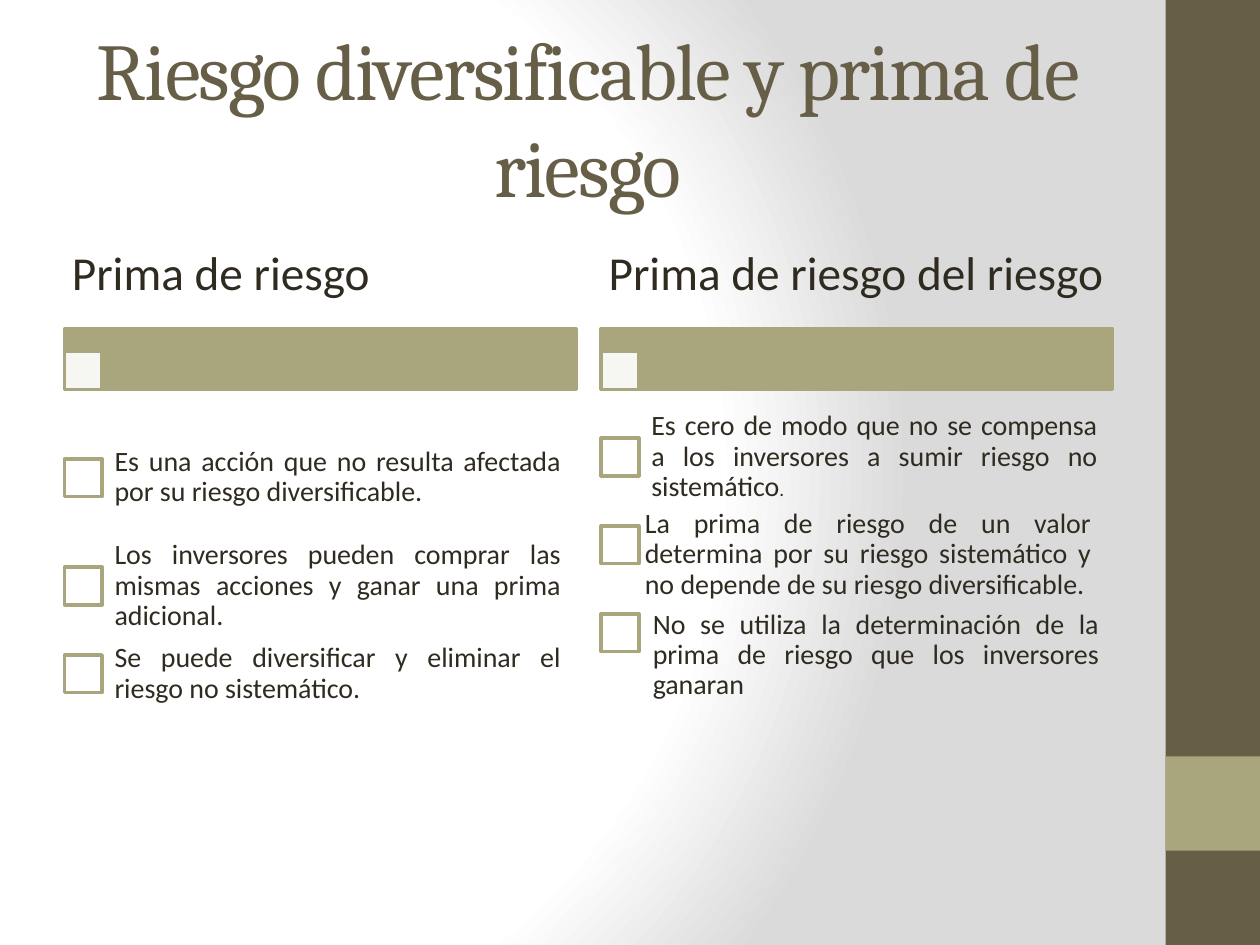
from lxml import etree
from pptx import Presentation
from pptx import util as u
from pptx.dml.color import RGBColor
from pptx.enum import shapes, text
from pptx.oxml import parse_xml
from pptx.oxml.ns import nsdecls, qn

COLORS = {"brown": "675E47", "olive": "A9A57C", "ink": "2F2B20",
          "white": "FFFFFF", "gray": "DADADA"}
BAR_TOP, BAR_HEIGHT = 2.18, 1.22
ROWS_TOP = 3.88
CHECK = 0.76
TEXT_LEFT = 0.71

# Each row: height, text shift (x, y), runs of (text, size)
COLUMNS = [
    (1.3, "Prima de riesgo", [
        (2.6, (0, 0), [("Es una acción que no resulta afectada por su riesgo "
                        "diversificable.", 16)]),
        (1.77, (0, 0), [("Los inversores pueden comprar las mismas acciones y "
                         "ganar una prima adicional.", 16)]),
        (1.77, (0, 0), [("Se puede diversificar y eliminar el riesgo no "
                         "sistemático.", 16)]),
    ]),
    (12.12, "Prima de riesgo del riesgo", [
        (1.77, (0, 0), [("Es cero de modo que no se compensa a los inversores a "
                         "sumir riesgo no sistemático", 16), (".", 11)]),
        (1.77, (-0.13, 0.2), [("La prima de riesgo de un valor determina por su "
                               "riesgo sistemático y no depende de su riesgo "
                               "diversificable.", 16)]),
        (1.77, (0.03, 0.46), [("No se utiliza la determinación de la prima de "
                               "riesgo que los inversores ganaran", 16)]),
    ]),
]


def color(name):
    return RGBColor.from_string(COLORS[name])


def add_rectangle(parent, left, top, width, height, fill, line=None, alpha=None):
    shape = parent.add_shape(shapes.MSO_SHAPE.RECTANGLE, u.Cm(left), u.Cm(top),
                             u.Cm(width), u.Cm(height))
    shape.shadow.inherit = False
    shape.fill.solid()
    shape.fill.fore_color.rgb = color(fill)
    if alpha:
        fill_color = shape.element.spPr.find(qn("a:solidFill"))[0]
        etree.SubElement(fill_color, qn("a:alpha")).set("val", str(alpha * 1000))
    if line:
        shape.line.color.rgb = color(line)
        shape.line.width = u.Pt(2)
    else:
        shape.line.fill.background()
    return shape


def add_text(parent, left, top, width, height, runs, align, font="Calibri",
             ink="ink", insets=(0.25, 0.13), line_spacing=0.9, tracking=None):
    box = parent.add_textbox(u.Cm(left), u.Cm(top), u.Cm(width), u.Cm(height))
    frame = box.text_frame
    frame.word_wrap = True
    frame.vertical_anchor = text.MSO_ANCHOR.MIDDLE
    frame.margin_left = frame.margin_right = u.Cm(insets[0])
    frame.margin_top = frame.margin_bottom = u.Cm(insets[1])
    paragraph = frame.paragraphs[0]
    paragraph.alignment = align
    paragraph.line_spacing = line_spacing
    for words, size in runs:
        run = paragraph.add_run()
        run.text = words
        run.font.name = font
        run.font.size = u.Pt(size)
        run.font.color.rgb = color(ink)
        if tracking:
            run.font._element.set("spc", str(tracking * 100))


def set_background(slide):
    slide.background.fill.solid()
    properties = slide.element.find(".//" + qn("p:bgPr"))
    stops = "".join(
        f'<a:gs pos="{position * 1000}"><a:srgbClr val="{COLORS[name]}"/></a:gs>'
        for position, name in [(0, "white"), (75, "white"), (100, "gray")])
    gradient = parse_xml(
        f'<a:gradFill {nsdecls("a")} rotWithShape="1"><a:gsLst>{stops}</a:gsLst>'
        '<a:path path="circle"><a:fillToRect l="20000" t="50000" r="100000" '
        'b="50000"/></a:path></a:gradFill>')
    properties.replace(properties[0], gradient)


def add_side_band(slide, left, top, width, height):
    add_rectangle(slide.shapes, left, top, width, height, "brown")
    # Square accent, one width above the bottom edge
    add_rectangle(slide.shapes, left, top + height - 2 * width, width, width,
                  "olive")


def add_title(slide, left, top, width, height):
    add_text(slide.shapes, left, top, width, height,
             [("Riesgo diversificable y prima de riesgo", 46)],
             text.PP_ALIGN.CENTER, font="Cambria", ink="brown",
             line_spacing=1.0, tracking=-1)


def add_checklist(slide, left, top, width, heading, rows):
    group = slide.shapes.add_group_shape().shapes

    # Heading bar with its marker in the lower left corner
    add_rectangle(group, left, top + BAR_TOP, width, BAR_HEIGHT, "olive", "olive")
    add_rectangle(group, left, top + BAR_TOP + BAR_HEIGHT - CHECK, CHECK, CHECK,
                  "white", "olive", alpha=90)
    add_text(group, left, top, width, BAR_TOP, [(heading, 27)],
             text.PP_ALIGN.LEFT, insets=(0.15, 0.1))

    # Stacked rows, each check box centred on its row
    row_top = top + ROWS_TOP
    for height, (shift_x, shift_y), runs in rows:
        add_rectangle(group, left, row_top + (height - CHECK) / 2, CHECK, CHECK,
                      "white", "olive")
        add_text(group, left + TEXT_LEFT + shift_x, row_top + shift_y,
                 width - TEXT_LEFT, height, runs, text.PP_ALIGN.JUSTIFY,
                 insets=(0.3, 0.3))
        row_top += height


def main():
    presentation = Presentation()
    presentation.slide_width = u.Cm(25.4)
    presentation.slide_height = u.Cm(19.05)
    slide = presentation.slides.add_slide(presentation.slide_layouts[6])

    set_background(slide)
    add_side_band(slide, 23.5, 0, 1.9, 19.05)
    add_title(slide, 1.27, 0.76, 21.16, 3.18)
    for left, heading, rows in COLUMNS:
        add_checklist(slide, left, 4.45, 10.31, heading, rows)

    presentation.save("out.pptx")


if __name__ == "__main__":
    main()
